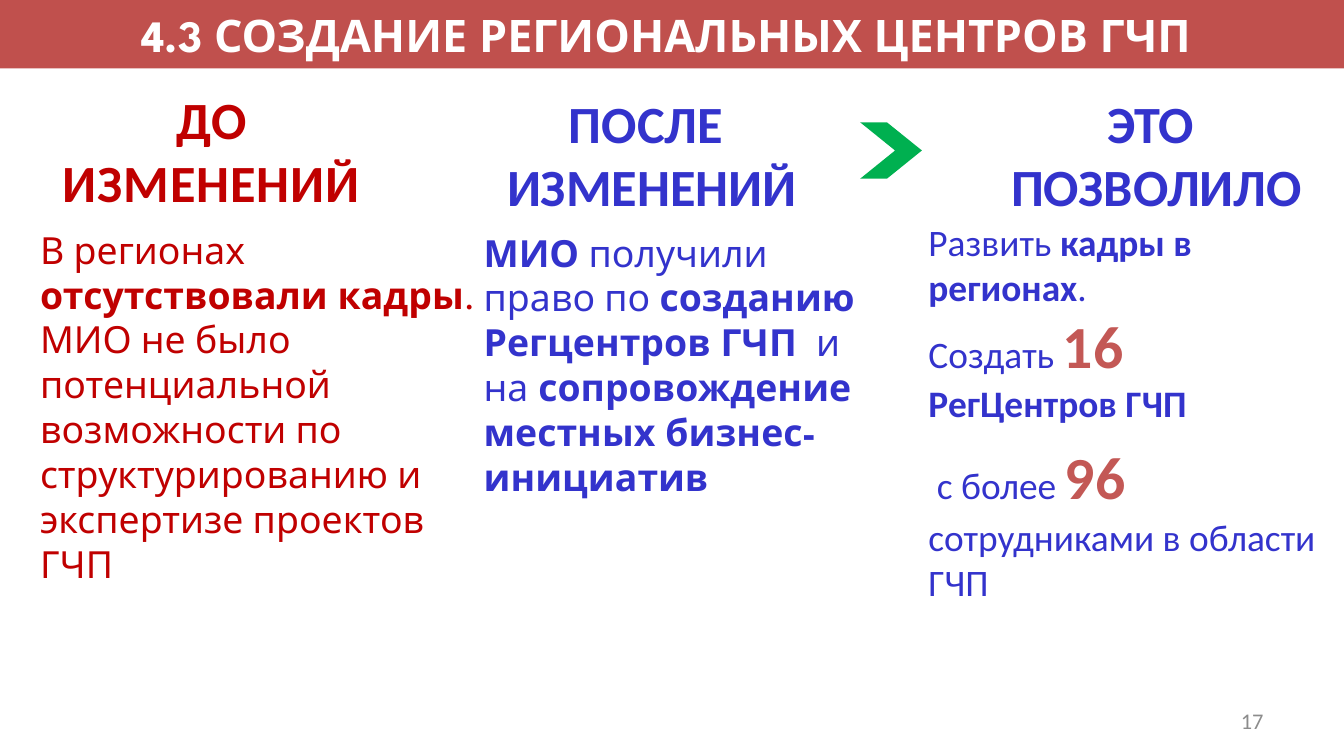
from pptx import Presentation
from pptx.dml.color import RGBColor
from pptx.enum.shapes import MSO_SHAPE
from pptx.enum.text import MSO_ANCHOR, MSO_AUTO_SIZE, PP_ALIGN
from pptx.util import Inches, Pt

RECT, CHEVRON = MSO_SHAPE.RECTANGLE, MSO_SHAPE.CHEVRON
LEFT, CENTER, RIGHT = PP_ALIGN.LEFT, PP_ALIGN.CENTER, PP_ALIGN.RIGHT
MIDDLE = MSO_ANCHOR.MIDDLE
GROW = MSO_AUTO_SIZE.SHAPE_TO_FIT_TEXT

SPARTAN, CALIBRI = "League Spartan", "Calibri"
RED, BLUE, BRICK = "C00000", "3333CC", "C0504D"
GREEN, GRAY, WHITE = "00B050", "8C8C8C", "FFFFFF"
BREAK = "\n"
BOLD = {"bold": True}
BIG = {"size": 32, "color": "C35855", "bold": True}


def color(code):
    return RGBColor.from_string(code)


def style(run, form):
    """Apply a dict of font values; "spacing" is in points."""
    for key, value in form.items():
        if key == "color":
            run.font.color.rgb = color(value)
        elif key == "spacing":
            run._r.get_or_add_rPr().set("spc", str(int(value * 100)))
        else:
            setattr(run.font, key, Pt(value) if key == "size" else value)


def write(frame, paras, base, align=LEFT):
    """Fill a frame with paragraphs, each a list of (text, changes to base)."""
    for i, runs in enumerate(paras):
        para = frame.paragraphs[0] if i == 0 else frame.add_paragraph()
        para.alignment = align
        for text, change in runs:
            if text == BREAK:
                para.add_line_break()
                continue
            run = para.add_run()
            run.text = text
            style(run, {**base, **change})


def add_text(slide, box, paras, base, align=LEFT, **form):
    frame = slide.shapes.add_textbox(*map(Inches, box)).text_frame
    for key, value in {"word_wrap": True, **form}.items():
        setattr(frame, key, value)
    write(frame, paras, base, align)


def add_block(slide, kind, box, fill):
    block = slide.shapes.add_shape(kind, *map(Inches, box))
    block.shadow.inherit = False
    block.fill.solid()
    block.fill.fore_color.rgb = color(fill)
    block.line.fill.background()
    return block


def add_banner(slide, box, title):
    frame = add_block(slide, RECT, box, BRICK).text_frame
    frame.vertical_anchor = MIDDLE
    base = {"name": SPARTAN, "size": 24, "bold": True, "color": WHITE}
    write(frame, [[(title, {})]], base, CENTER)


def add_head(slide, box, lines, form):
    base = {"name": CALIBRI, "size": 28, "bold": True, **form}
    add_text(slide, box, [[(line, {})] for line in lines], base, CENTER,
             word_wrap=False, auto_size=GROW)


def add_body(slide, box, paras, font, ink):
    base = {"name": font, "size": 20, "bold": False, "color": ink}
    add_text(slide, box, paras, base, auto_size=GROW)


def add_number(slide, box, text):
    base = {"name": CALIBRI, "size": 12, "color": GRAY}
    add_text(slide, box, [[(text, {})]], base, RIGHT, vertical_anchor=MIDDLE)


BEFORE = [
    [("В регионах ", {}), ("отсутствовали кадры", BOLD), (".", {})],
    [("МИО не было потенциальной возможности по структурированию "
      "и экспертизе проектов ГЧП", {})],
]
AFTER = [[
    ("МИО", BOLD), (" получили право по ", {}),
    ("созданию Регцентров ГЧП ", BOLD), (" и на", {}),
    (" сопровождение местных бизнес-инициатив", BOLD),
]]
RESULT = [
    [("Развить", {}), (" кадры в регионах", BOLD), (".", {})],
    [("Создать ", {}), ("16 ", BIG), ("РегЦентров ГЧП", BOLD), (BREAK, {}),
     (" с более ", {}), ("96", BIG), (" ", {**BIG, "size": 40}),
     ("сотрудниками в области ГЧП", {})],
]


def main():
    deck = Presentation()
    deck.slide_width = Inches(10)
    deck.slide_height = deck.slide_width * 9 // 16
    slide = deck.slides.add_slide(deck.slide_layouts[6])

    add_body(slide, (3.5, 1.66, 2.99, 2.12), AFTER, SPARTAN, BLUE)
    add_body(slide, (0.2, 1.64, 3.46, 3.1), BEFORE, SPARTAN, RED)
    add_banner(slide, (0, 0, 10, 0.51),
               "4.3 СОЗДАНИЕ РЕГИОНАЛЬНЫХ ЦЕНТРОВ ГЧП ")
    add_body(slide, (6.81, 1.58, 3.15, 3), RESULT, CALIBRI, BLUE)
    arrow = add_block(slide, CHEVRON, (6.4, 0.91, 0.46, 0.42), GREEN)
    arrow.adjustments[0] = 0.62
    add_number(slide, (7.17, 5.21, 2.33, 0.3), "17")

    add_head(slide, (0.35, 0.6, 2.54, 1.04), ("ДО ", "ИЗМЕНЕНИЙ "),
             {"color": RED, "spacing": 0.5})
    add_head(slide, (3.66, 0.63, 2.38, 1.04), ("ПОСЛЕ ", "ИЗМЕНЕНИЙ"),
             {"color": BLUE})
    add_head(slide, (7.41, 0.63, 2.39, 1.04), ("ЭТО ", "ПОЗВОЛИЛО"),
             {"color": BLUE})
    deck.save("out.pptx")


if __name__ == "__main__":
    main()
